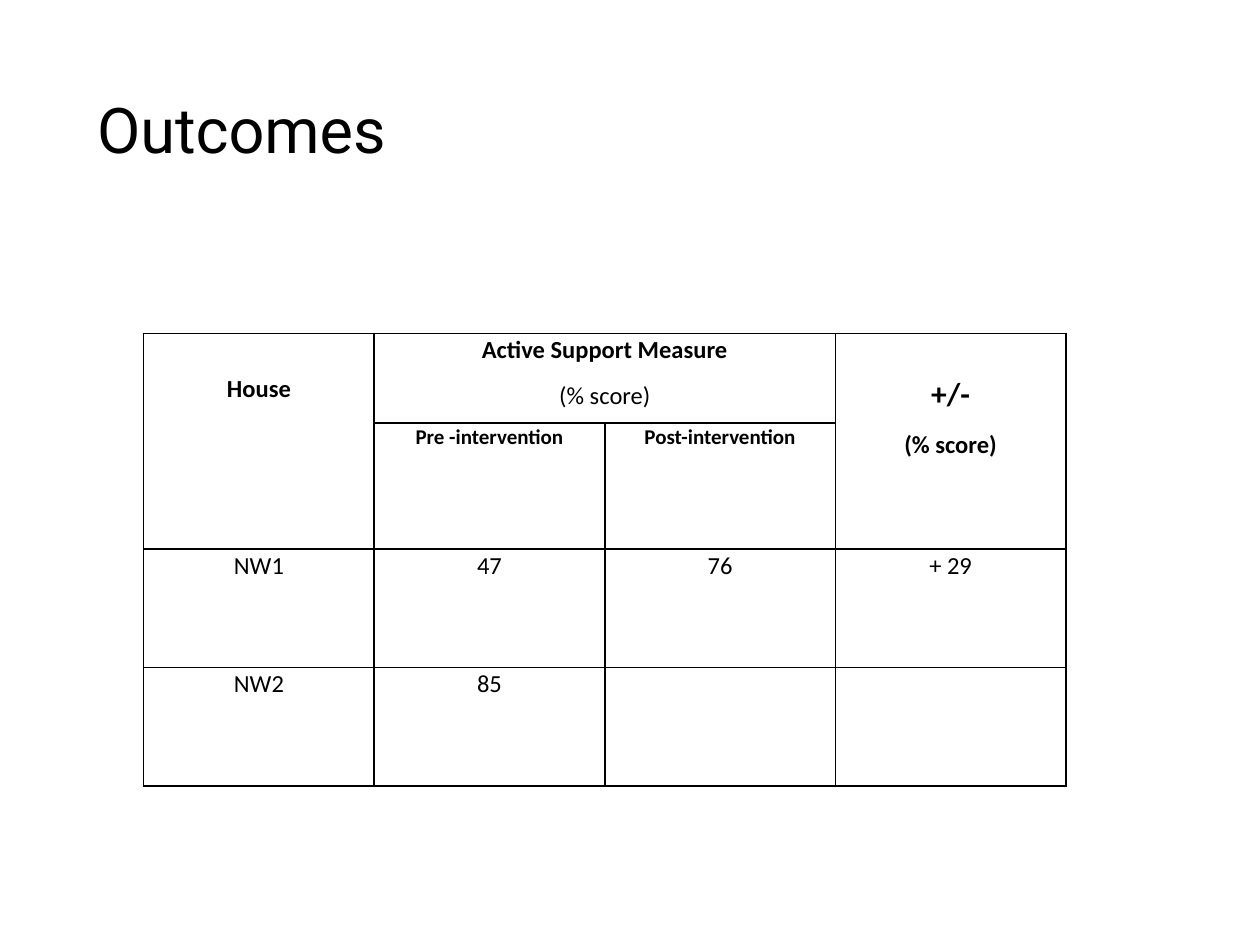
"""Build the Outcomes slide with its Active Support Measure table."""

from dataclasses import dataclass

from lxml.etree import SubElement
from pptx import Presentation
from pptx.dml.color import RGBColor
from pptx.enum.text import MSO_ANCHOR, PP_ALIGN
from pptx.oxml.ns import qn
from pptx.shapes.autoshape import Shape
from pptx.slide import Slide
from pptx.table import _Cell
from pptx.util import Pt

BLACK = RGBColor(0x00, 0x00, 0x00)
COLUMN_WIDTH = 131.76
ROW_HEIGHTS = (51.12, 23.04, 67.68, 67.68)
HEADING_DROP = 22.4


@dataclass(frozen=True)
class Line:
    text: str
    size: float = 14
    bold: bool = False


@dataclass(frozen=True)
class Entry:
    row: int
    column: int
    lines: tuple[Line, ...]
    row_span: int = 1
    column_span: int = 1
    top: float = 0


ENTRIES = (
    Entry(0, 0, (Line("House", bold=True),), row_span=2, top=HEADING_DROP),
    Entry(0, 1, (Line("Active Support Measure", bold=True), Line("(% score)")), column_span=2),
    Entry(0, 3, (Line("+/-", 18, True), Line("(% score)", bold=True)), row_span=2, top=HEADING_DROP),
    Entry(1, 1, (Line("Pre -intervention", 12, True),)),
    Entry(1, 2, (Line("Post-intervention", 12, True),)),
    Entry(2, 0, (Line("NW1"),)),
    Entry(2, 1, (Line("47"),)),
    Entry(2, 2, (Line("76"),)),
    Entry(2, 3, (Line("+ 29"),)),
    Entry(3, 0, (Line("NW2"),)),
    Entry(3, 1, (Line("85"),)),
)


def format_title(title: Shape) -> None:
    title.left, title.top, title.width, title.height = Pt(48.24), Pt(48.24), Pt(499.68), Pt(103.68)
    title.text_frame.text = "Outcomes"
    title.text_frame.vertical_anchor = MSO_ANCHOR.TOP
    heading = title.text_frame.paragraphs[0]
    heading.alignment = PP_ALIGN.LEFT
    heading.font.name = "Roboto"
    heading.font.size = Pt(36)
    heading.font.color.rgb = BLACK


def style_cell(cell: _Cell) -> None:
    cell.margin_left = cell.margin_right = Pt(5.04)
    cell.margin_top = cell.margin_bottom = Pt(0)
    properties = cell._tc.get_or_add_tcPr()
    for side in ("a:lnL", "a:lnR", "a:lnT", "a:lnB"):
        border = SubElement(properties, qn(side), w=str(Pt(1)))
        fill = SubElement(border, qn("a:solidFill"))
        SubElement(fill, qn("a:srgbClr"), val=str(BLACK))
    cell.fill.background()


def write_entry(cell: _Cell, lines: tuple[Line, ...]) -> None:
    cell.text = "\n".join(line.text for line in lines)
    for paragraph, line in zip(cell.text_frame.paragraphs, lines):
        paragraph.alignment = PP_ALIGN.CENTER
        paragraph.line_spacing = 1.07
        paragraph.space_after = Pt(8)
        paragraph.font.name = "Calibri"
        paragraph.font.size = Pt(line.size)
        paragraph.font.bold = line.bold
        paragraph.font.color.rgb = BLACK


def add_outcomes(slide: Slide) -> None:
    frame = slide.shapes.add_table(
        4, 4, Pt(82.08), Pt(190.5), Pt(4 * COLUMN_WIDTH), Pt(sum(ROW_HEIGHTS))
    )
    outcomes = frame.table
    outcomes.first_row = outcomes.horz_banding = False
    for column in outcomes.columns:
        column.width = Pt(COLUMN_WIDTH)
    for row, height in zip(outcomes.rows, ROW_HEIGHTS):
        row.height = Pt(height)
    for cell in outcomes.iter_cells():
        style_cell(cell)
    for entry in ENTRIES:
        cell = outcomes.cell(entry.row, entry.column)
        if entry.row_span * entry.column_span > 1:
            cell.merge(outcomes.cell(
                entry.row + entry.row_span - 1, entry.column + entry.column_span - 1
            ))
        cell.margin_top = Pt(entry.top)
        write_entry(cell, entry.lines)


def main() -> None:
    presentation = Presentation()
    presentation.slide_width, presentation.slide_height = Pt(720), Pt(540)
    slide = presentation.slides.add_slide(presentation.slide_layouts[5])
    format_title(slide.shapes.title)
    add_outcomes(slide)
    presentation.save("out.pptx")


if __name__ == "__main__":
    main()
